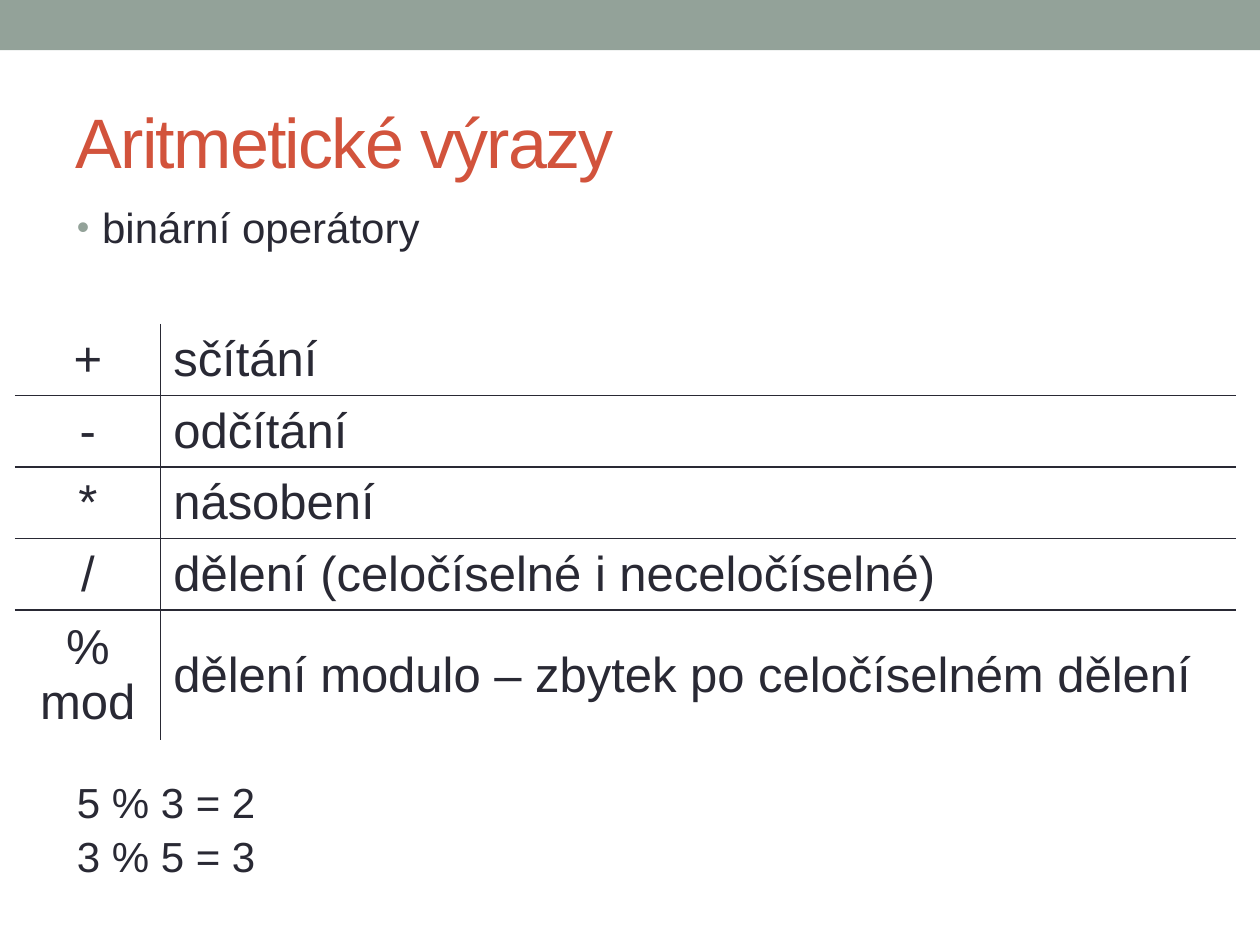
"""Build the slide on binary arithmetic operators."""
from lxml import etree
from pptx import Presentation
from pptx.dml.color import RGBColor
from pptx.enum.shapes import MSO_SHAPE
from pptx.enum.text import MSO_ANCHOR, PP_ALIGN
from pptx.oxml.ns import qn
from pptx.util import Cm, Pt

RECTANGLE = MSO_SHAPE.RECTANGLE
MIDDLE = MSO_ANCHOR.MIDDLE
LEFT, CENTER = PP_ALIGN.LEFT, PP_ALIGN.CENTER
NO_GRID_STYLE = "{2D5ABB26-0587-4C30-8999-92F81FD0307C}"


class Theme:
    font = "Arial"
    ink, accent, sage = "292934", "D2533C", "93A299"
    title_size, body_size, table_size = Pt(40), Pt(24), Pt(28)
    paragraph_gap, rule = Pt(2.4), Pt(1)


def format_text(frame, size, color, **formats):
    for para in frame.paragraphs:
        for name, value in formats.items():
            setattr(para, name, value)
        for span in para.runs:
            for name, value in {"name": Theme.font, "size": size, "bold": False}.items():
                setattr(span.font, name, value)
            span.font.color.rgb = RGBColor.from_string(color)


def add_border(cell, side):
    line = etree.SubElement(cell._tc.get_or_add_tcPr(), qn(f"a:ln{side}"), w=str(Theme.rule))
    fill = etree.SubElement(line, qn("a:solidFill"))
    etree.SubElement(fill, qn("a:srgbClr"), val=Theme.ink)


deck = Presentation()
deck.slide_width, deck.slide_height = Cm(25.4), Cm(19.05)
page = deck.slides.add_slide(deck.slide_layouts[5])

bar = page.shapes.add_shape(RECTANGLE, 0, 0, deck.slide_width, Cm(1.01))
bar.shadow.inherit = False
bar.fill.solid()
bar.fill.fore_color.rgb = RGBColor.from_string(Theme.sage)
bar.line.fill.background()

title = page.shapes.title
place = {"left": Cm(1.27), "top": Cm(1.47), "width": Cm(22.86), "height": Cm(2.74)}
for name, value in place.items():
    setattr(title, name, value)
title.text_frame.text = "Aritmetické výrazy"
title.text_frame.vertical_anchor = MIDDLE
format_text(title.text_frame, Theme.title_size, Theme.accent, alignment=LEFT)
title.text_frame.paragraphs[0].runs[0].font._element.set("spc", "-100")

texts = [
    ("binární operátory", Cm(3.94), Cm(23.6), Cm(2.79)),
    ("5 % 3 = 2\n3 % 5 = 3", Cm(15.52), Cm(5.21), Cm(2.31)),
]
boxes = []
for text, top, width, height in texts:
    box = page.shapes.add_textbox(Cm(1.3), top, width, height)
    box.text_frame.word_wrap = True
    box.text_frame.text = text
    format_text(box.text_frame, Theme.body_size, Theme.ink, space_before=Theme.paragraph_gap)
    boxes.append(box)

bullet = boxes[0].text_frame.paragraphs[0]._p.get_or_add_pPr()
bullet.set("marL", str(Cm(0.51)))
bullet.set("indent", str(-Cm(0.51)))
bullet_color = etree.SubElement(bullet, qn("a:buClr"))
etree.SubElement(bullet_color, qn("a:srgbClr"), val=Theme.sage)
etree.SubElement(bullet, qn("a:buSzPct"), val="85000")
etree.SubElement(bullet, qn("a:buFont"), typeface=Theme.font)
etree.SubElement(bullet, qn("a:buChar"), char="•")

operators = [
    ("+", "sčítání"),
    ("-", "odčítání"),
    ("*", "násobení"),
    ("/", "dělení (celočíselné i neceločíselné)"),
    ("%\nmod", "dělení modulo – zbytek po celočíselném dělení"),
]
last = len(operators) - 1
row_height, last_height = Cm(1.35), Cm(2.46)
frame = page.shapes.add_table(len(operators), 2, Cm(0.3), Cm(6.53), Cm(24.61),
                              row_height * last + last_height)
table = frame.table
table.first_row = table.horz_banding = False
table._tbl.tblPr.find(qn("a:tableStyleId")).text = NO_GRID_STYLE
for column, width in zip(table.columns, (Cm(2.94), Cm(21.67))):
    column.width = width
for index, entry in enumerate(operators):
    table.rows[index].height = last_height if index == last else row_height
    for cell, text, align, side in zip(table.rows[index].cells, entry, (CENTER, LEFT), "RL"):
        cell.text = text
        cell.vertical_anchor = MIDDLE
        format_text(cell.text_frame, Theme.table_size, Theme.ink, alignment=align)
        add_border(cell, side)
        if index > 0:
            add_border(cell, "T")
        if index < last:
            add_border(cell, "B")
        cell.fill.background()

deck.save("out.pptx")
